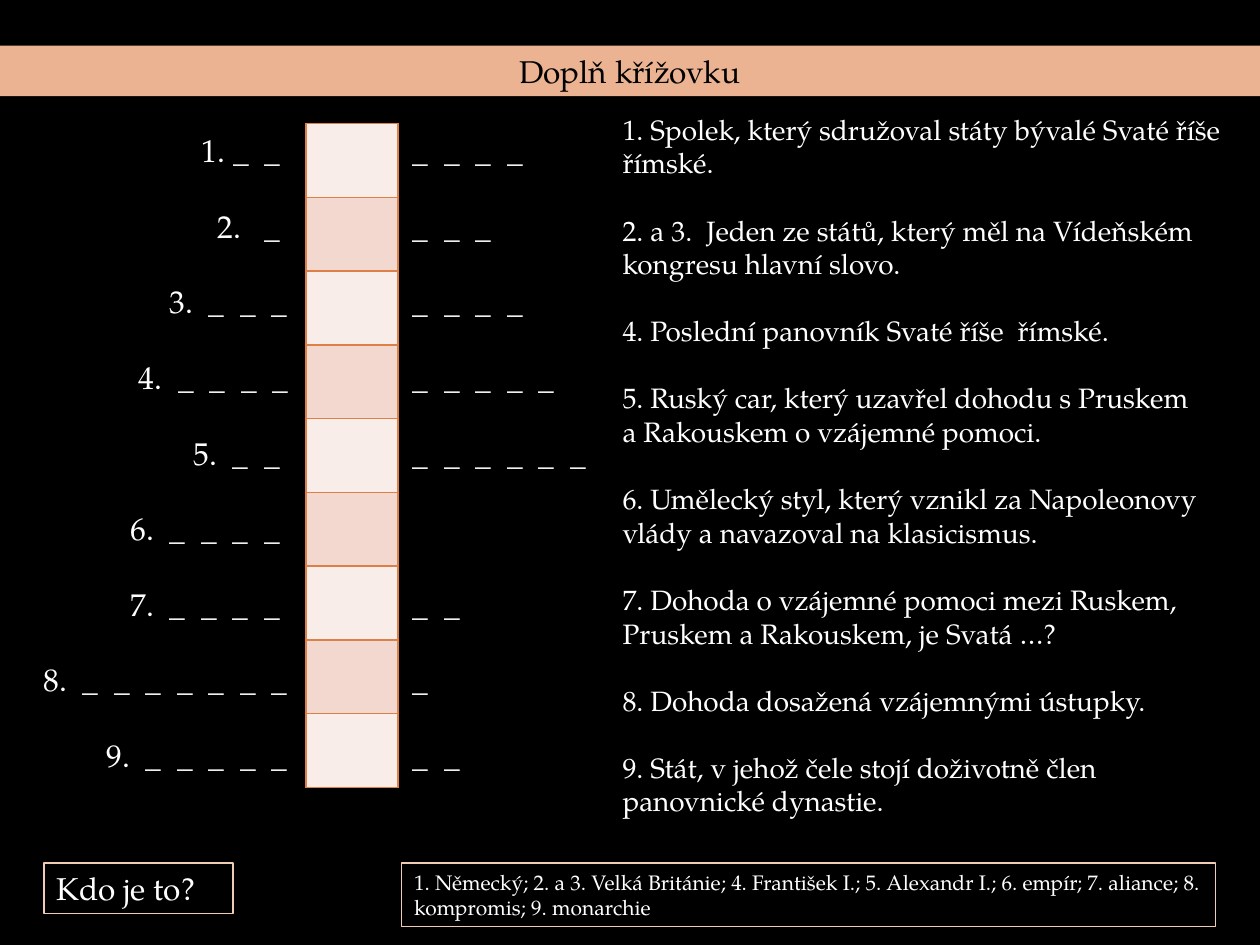
from dataclasses import dataclass
from lxml.etree import SubElement
from pptx import Presentation
from pptx.dml.color import RGBColor as Rgb
from pptx.enum.shapes import MSO_SHAPE as Shape
from pptx.enum.text import MSO_ANCHOR as Anchor, MSO_AUTO_SIZE as Auto, PP_ALIGN as Align
from pptx.oxml.ns import qn
from pptx.util import Cm, Pt

FONT = "TeX Gyre Pagella"
HUES = {
    "black": "000000", "white": "FFFFFF", "band": "EBB391", "frame": "F1CCB5",
    "rule": "DD8047", "light": "F9EDE9", "dark": "F2D8CF",
}
LINE = 21.6


@dataclass
class Box:
    left: float
    top: float
    width: float
    height: float

    def place(self) -> tuple:
        return Cm(self.left), Cm(self.top), Cm(self.width), Cm(self.height)


@dataclass
class Row:
    indent: float
    before: str
    after: str


@dataclass
class Label:
    box: Box
    text: str
    size: int
    ink: str
    fill: str = ""
    line: str = ""
    align: Align = Align.LEFT


ROWS = [
    Row(3.82, "1. _  _", "_  _  _  _"),
    Row(4.14, "2.   _", "_  _  _"),
    Row(3.17, "3.  _  _  _", "_  _  _  _"),
    Row(2.55, "4.  _  _  _  _", "_  _  _  _  _"),
    Row(3.65, "5.  _  _", "_  _  _  _  _  _"),
    Row(2.38, "6.  _  _  _  _", ""),
    Row(2.38, "7.  _  _  _  _", "_  _"),
    Row(0.63, "8.  _  _  _  _  _  _  _", "_"),
    Row(1.9, "9.  _  _  _  _  _", "_  _"),
]
CLUES = [
    ["1. Spolek, který sdružoval státy bývalé Svaté říše římské."],
    ["2. a 3.  Jeden ze států, který měl na Vídeňském kongresu hlavní slovo."],
    ["4. Poslední panovník Svaté říše  římské."],
    ["5. Ruský car, který uzavřel dohodu s Pruskem", "a Rakouskem o vzájemné pomoci."],
    ["6. Umělecký styl, který vznikl za Napoleonovy vlády a navazoval na klasicismus."],
    ["7. Dohoda o vzájemné pomoci mezi Ruskem, Pruskem a Rakouskem, je Svatá …?"],
    ["8. Dohoda dosažená vzájemnými ústupky."],
    ["9. Stát, v jehož čele stojí doživotně člen panovnické dynastie."],
]
LABELS = [
    Label(Box(0, 0.92, 25.4, 1.02), "Doplň křížovku", 18, "black",
          fill="band", align=Align.CENTER),
    Label(Box(0.89, 17.4, 3.81, 1.02), "Kdo je to?", 18, "white", line="frame"),
    Label(Box(8.1, 17.4, 16.41, 1.28),
          "1. Německý; 2. a 3. Velká Británie; 4. František I.; 5. Alexandr I.; "
          "6. empír; 7. aliance; 8. kompromis; 9. monarchie", 12, "white", line="frame"),
]


def hue(name: str) -> Rgb:
    return Rgb.from_string(HUES[name])


def style(frame, size: int, ink: str, align: Align = Align.LEFT) -> None:
    frame.word_wrap = True
    frame.auto_size = Auto.SHAPE_TO_FIT_TEXT
    frame.vertical_anchor = Anchor.TOP
    for para in frame.paragraphs:
        para.alignment = align
        for run in para.runs:
            run.font.name = FONT
            run.font.size = Pt(size)
            run.font.color.rgb = hue(ink)


def draw_label(slide, label: Label) -> None:
    shape = slide.shapes.add_shape(Shape.RECTANGLE, *label.box.place())
    shape.shadow.inherit = False
    if label.fill:
        shape.fill.solid()
        shape.fill.fore_color.rgb = hue(label.fill)
    else:
        shape.fill.background()
    if label.line:
        shape.line.color.rgb = hue(label.line)
        shape.line.width = Pt(0.75)
    else:
        shape.line.fill.background()
    shape.text_frame.text = label.text
    style(shape.text_frame, label.size, label.ink, label.align)


def draw_text(slide, box: Box, lines: list[str], size: int) -> list:
    frame = slide.shapes.add_textbox(*box.place()).text_frame
    frame.text = "\n".join(lines)
    style(frame, size, "white")
    return list(frame.paragraphs)


def draw_left(slide, box: Box) -> None:
    paras = draw_text(slide, box, [row.before for row in ROWS], 18)
    for num, (para, row) in enumerate(zip(paras, ROWS)):
        if num:
            para.space_before = Pt(LINE)
        props = para._p.get_or_add_pPr()
        props.set("marL", str(Cm(row.indent)))
        props.set("indent", "0")


def draw_right(slide, box: Box) -> None:
    spots = [num for num, row in enumerate(ROWS) if row.after]
    paras = draw_text(slide, box, [ROWS[num].after for num in spots], 18)
    for para, last, num in zip(paras[1:], spots, spots[1:]):
        para.space_before = Pt(LINE * (2 * (num - last) - 1))


def draw_clues(slide, box: Box) -> None:
    paras = iter(draw_text(slide, box, [line for clue in CLUES for line in clue], 16))
    for clue in CLUES:
        for num, para in zip(range(len(clue)), paras):
            if num == 0 and clue is not CLUES[0]:
                para.space_before = Pt(19.2)


def draw_edges(cell) -> None:
    props = cell._tc.get_or_add_tcPr()
    for spot, side in enumerate(("lnL", "lnR", "lnT", "lnB")):
        edge = SubElement(props, qn(f"a:{side}"), w=str(Pt(1)))
        fill = SubElement(edge, qn("a:solidFill"))
        SubElement(fill, qn("a:srgbClr"), val=HUES["rule"])
        props.insert(spot, edge)


def draw_grid(slide, box: Box) -> None:
    table = slide.shapes.add_table(len(ROWS), 1, *box.place()).table
    for num, row in enumerate(table.rows):
        row.height = Cm(box.height / len(ROWS))
        cell = table.cell(num, 0)
        cell.fill.solid()
        cell.fill.fore_color.rgb = hue("dark" if num % 2 else "light")
        draw_edges(cell)


def main() -> None:
    deck = Presentation()
    deck.slide_width, deck.slide_height = Cm(25.4), Cm(19.05)
    slide = deck.slides.add_slide(deck.slide_layouts[6])
    slide.background.fill.solid()
    slide.background.fill.fore_color.rgb = hue("black")
    title, *notes = LABELS
    draw_label(slide, title)
    draw_left(slide, Box(0, 2.52, 6.17, 13.46))
    draw_right(slide, Box(8.07, 2.52, 4.22, 13.46))
    draw_grid(slide, Box(6.17, 2.49, 1.85, 13.39))
    draw_clues(slide, Box(12.3, 2.14, 12.8, 14.63))
    for note in notes:
        draw_label(slide, note)
    deck.save("out.pptx")


if __name__ == "__main__":
    main()
